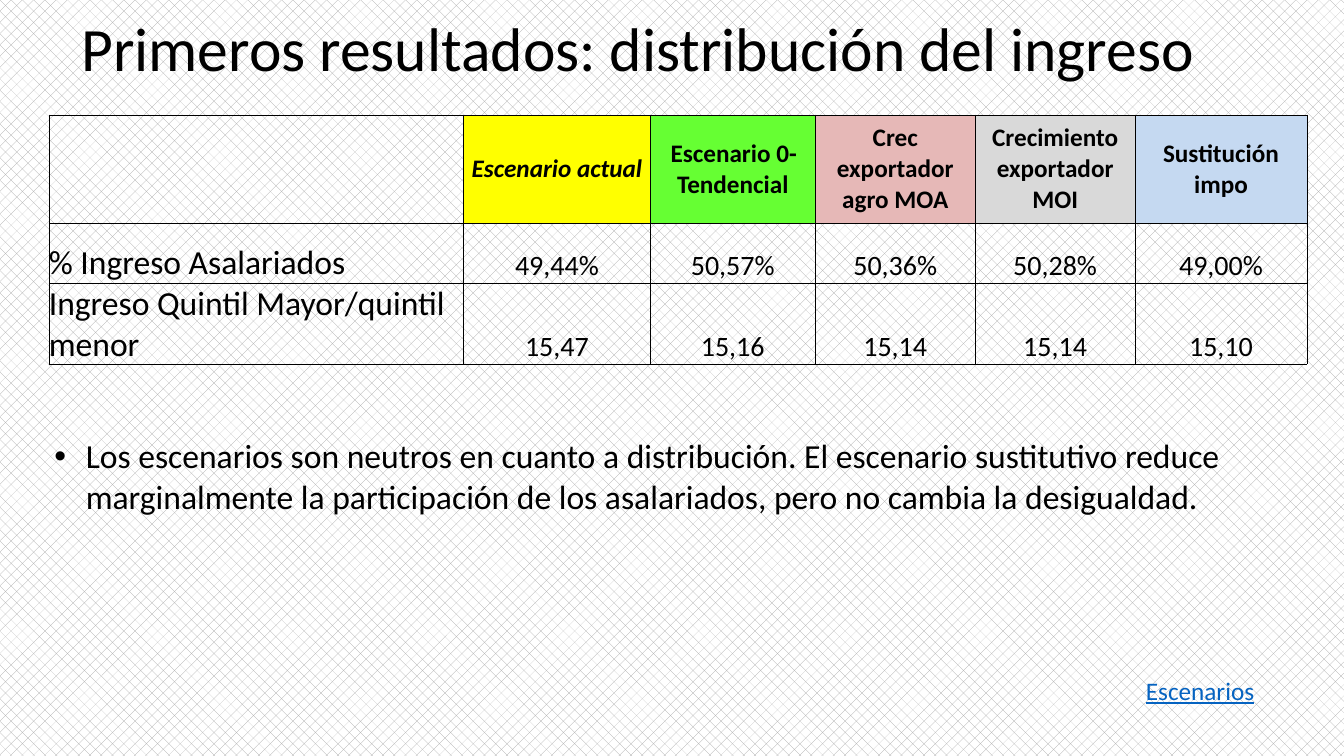
from lxml import etree
from pptx import Presentation
from pptx.dml import color
from pptx.enum import dml, text
from pptx.oxml import ns
from pptx.util import Pt

FONT = "Calibri"
COLORS = {
    "ink": "000000", "paper": "FFFFFF", "hatch": "A5A5A5", "link": "0563C1",
    "yellow": "FFFF00", "green": "66FF33", "rose": "E6B8B7",
    "gray": "D9D9D9", "sky": "C5D9F1",
}
TITLE = "Primeros resultados: distribución del ingreso"
SCENARIOS = [
    ("Escenario actual", "yellow"),
    ("Escenario 0-Tendencial", "green"),
    ("Crec exportador agro MOA", "rose"),
    ("Crecimiento exportador MOI", "gray"),
    ("Sustitución impo", "sky"),
]
RESULTS = [
    ("% Ingreso Asalariados", "49,44%", "50,57%", "50,36%", "50,28%", "49,00%"),
    ("Ingreso Quintil Mayor/quintil menor", "15,47", "15,16", "15,14", "15,14", "15,10"),
]
CONCLUSION = (
    "Los escenarios son neutros en cuanto a distribución. El escenario sustitutivo "
    "reduce marginalmente la participación de los asalariados, pero no cambia la desigualdad."
)
LINK = "Escenarios"
WIDTHS = [296.4, 133.2, 118, 114.2, 114.2, 122.8]
HEIGHTS = [77.4, 42.8, 55.4]


def rgb(name):
    return color.RGBColor.from_string(COLORS[name])


def write(frame, words, size, ink="ink"):
    para = frame.paragraphs[0]
    para.text = words
    para.font.name = FONT
    para.font.size = Pt(size)
    para.font.color.rgb = rgb(ink)
    return para


def add_text(page, place, words, size, ink="ink", wrap=True):
    box = page.shapes.add_textbox(*map(Pt, place))
    box.text_frame.word_wrap = wrap
    return box.text_frame, write(box.text_frame, words, size, ink)


def add_borders(cell):
    properties = cell._tc.get_or_add_tcPr()
    for side in ("a:lnL", "a:lnR", "a:lnT", "a:lnB"):
        line = etree.SubElement(properties, ns.qn(side), w=str(Pt(0.5)))
        fill = etree.SubElement(line, ns.qn("a:solidFill"))
        etree.SubElement(fill, ns.qn("a:srgbClr"), val=COLORS["ink"])


def fill_cell(cell, words, row, column):
    heading = row == 0
    cell.margin_left = cell.margin_right = cell.margin_top = cell.margin_bottom = 0
    cell.vertical_anchor = text.MSO_ANCHOR.MIDDLE if heading else text.MSO_ANCHOR.BOTTOM
    add_borders(cell)
    if heading and column:
        cell.fill.solid()
        cell.fill.fore_color.rgb = rgb(SCENARIOS[column - 1][1])
    else:
        cell.fill.background()
    if words:
        para = write(cell.text_frame, words, 18 if heading else 20 if column else 24)
        para.font.bold = heading
        para.font.italic = heading and column == 1
        para.alignment = text.PP_ALIGN.CENTER if column else text.PP_ALIGN.LEFT


def add_results(page):
    rows = [("", *(name for name, _ in SCENARIOS)), *RESULTS]
    frame = page.shapes.add_table(
        len(rows), len(WIDTHS), Pt(34.9), Pt(82.1), Pt(sum(WIDTHS)), Pt(sum(HEIGHTS)))
    table = frame.table
    table.first_row = table.horz_banding = False
    for column, width in zip(table.columns, WIDTHS):
        column.width = Pt(width)
    for row, height in zip(table.rows, HEIGHTS):
        row.height = Pt(height)
    for r, row in enumerate(rows):
        for c, words in enumerate(row):
            fill_cell(table.cell(r, c), words, r, c)


def main():
    deck = Presentation()
    deck.slide_width, deck.slide_height = Pt(960), Pt(540)
    page = deck.slides.add_slide(deck.slide_layouts[6])
    backdrop = page.background.fill
    backdrop.patterned()
    backdrop.pattern = dml.MSO_PATTERN.PERCENT_25
    backdrop.fore_color.rgb = rgb("hatch")
    backdrop.back_color.rgb = rgb("paper")

    frame, para = add_text(page, (51.1, 7.9, 864.7, 57.6), TITLE, 44)
    frame.vertical_anchor = text.MSO_ANCHOR.MIDDLE
    para.line_spacing = 0.9

    add_results(page)

    frame, para = add_text(page, (31.7, 307.4, 872.6, 65.5), CONCLUSION, 24)
    properties = para._p.get_or_add_pPr()
    properties.set("marL", str(Pt(22.5)))
    properties.set("indent", str(-Pt(22.5)))
    bullet_font = etree.Element(ns.qn("a:buFont"), typeface="Arial")
    bullet = etree.Element(ns.qn("a:buChar"), char="•")
    properties.insert(0, bullet_font)
    properties.insert(1, bullet)

    frame, para = add_text(page, (811.4, 478.8, 92.9, 28.8), LINK, 18, "link", wrap=False)
    para.font.underline = True
    deck.save("out.pptx")


if __name__ == "__main__":
    main()
